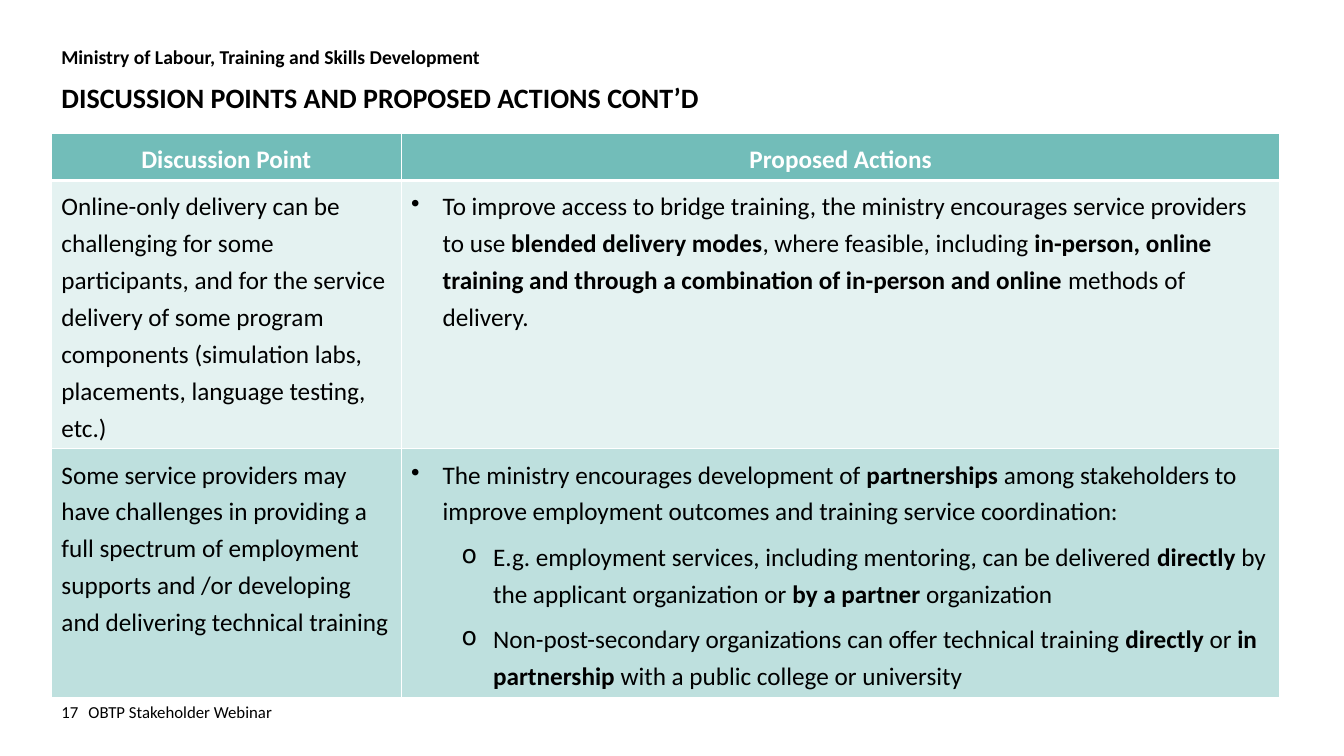
from dataclasses import dataclass

from lxml import etree
from pptx import Presentation
from pptx import util as u
from pptx.dml import color
from pptx.enum import text
from pptx.oxml import ns

COLORS = {"ink": "000000", "white": "FFFFFF", "teal": "44A7A2", "pale": "BEE0DE"}
FONT = "Calibri"
LEFT = 36.72
COLUMN_WIDTHS = (249.84, 627.84)


@dataclass(frozen=True)
class Line:
    """A paragraph of a cell; ** switches bold on and off."""
    words: str
    bullet: str = ""
    level: int = 0


@dataclass(frozen=True)
class Row:
    height: float
    fill: str
    opacity: int
    cells: tuple[tuple[Line, ...], ...]
    header: bool = False


@dataclass(frozen=True)
class Label:
    words: str
    left: float
    top: float
    width: float
    height: float
    size: float = 12
    bold: bool = False
    anchor: text.MSO_ANCHOR = text.MSO_ANCHOR.MIDDLE


LABELS = (
    Label("Ministry of Labour, Training and Skills Development", LEFT, 28.8, 700.56, 24.48,
          size=14, bold=True, anchor=text.MSO_ANCHOR.TOP),
    Label("17", LEFT, 493.92, 54, 28.8),
    Label("OBTP Stakeholder Webinar", 56.16, 493.92, 292.32, 28.8),
)

ROWS = (
    Row(33.84, "teal", 75, ((Line("Discussion Point"),), (Line("Proposed Actions"),)), header=True),
    Row(182.88, "teal", 14, (
        (Line("Online-only delivery can be challenging for some participants, and for the "
              "service delivery of some program components (simulation labs, placements, "
              "language testing, etc.)"),),
        (Line("To improve access to bridge training, the ministry encourages service providers "
              "to use **blended delivery modes**, where feasible, including **in-person, online "
              "training and through a combination of in-person and online **methods of "
              "delivery.", "•"),),
    )),
    Row(168.48, "pale", 100, (
        (Line("Some service providers may have challenges in providing a full spectrum of "
              "employment supports and /or developing and delivering technical training"),),
        (Line("The ministry encourages development of **partnerships **among stakeholders to "
              "improve employment outcomes and training service coordination:", "•"),
         Line("E.g. employment services, including mentoring, can be delivered **directly **by "
              "the applicant organization or **by a partner **organization", "o", 1),
         Line("Non-post-secondary organizations can offer technical training **directly** or "
              "**in partnership **with a public college or university", "o", 1)),
    )),
)


def write(para, words: str, *, size: float, bold: bool = False, ink: str = "ink",
          align=text.PP_ALIGN.LEFT, line_spacing: float = 1.0, space_after: float = 0) -> None:
    """Fill a paragraph, reversing the bold setting at each ** mark."""
    para.alignment = align
    para.line_spacing = line_spacing
    para.space_after = u.Pt(space_after)
    for index, part in enumerate(words.split("**")):
        if part:
            span = para.add_run()
            span.text = part
            span.font.name = FONT
            span.font.size = u.Pt(size)
            span.font.bold = bold != bool(index % 2)
            span.font.color.rgb = color.RGBColor.from_string(COLORS[ink])


def add_bullet(para, mark: str, level: int) -> None:
    para.level = level
    properties = para._p.get_or_add_pPr()
    properties.set("marL", str(u.Pt(22.5 + 36 * level)))
    properties.set("indent", str(u.Pt(-22.5)))
    etree.SubElement(properties, ns.qn("a:buChar"), char=mark)


def add_borders(cell, *, top: float, bottom: float) -> None:
    properties = cell._tc.get_or_add_tcPr()
    for side, width in {"L": 1, "R": 1, "T": top, "B": bottom}.items():
        line = etree.SubElement(properties, ns.qn(f"a:ln{side}"), w=str(u.Pt(width)))
        fill = etree.SubElement(line, ns.qn("a:solidFill"))
        etree.SubElement(fill, ns.qn("a:srgbClr"), val=COLORS["white"])


def paint(cell, fill: str, opacity: int) -> None:
    cell.fill.solid()
    cell.fill.fore_color.rgb = color.RGBColor.from_string(COLORS[fill])
    if opacity < 100:
        swatch = cell._tc.tcPr.find(f".//{ns.qn('a:srgbClr')}[@val='{COLORS[fill]}']")
        etree.SubElement(swatch, ns.qn("a:alpha"), val=str(opacity * 1000))


def fill_cell(cell, row: Row, lines: tuple[Line, ...], *, top: float) -> None:
    add_borders(cell, top=top, bottom=3 if row.header else 1)
    paint(cell, row.fill, row.opacity)
    frame = cell.text_frame
    for index, line in enumerate(lines):
        para = frame.add_paragraph() if index else frame.paragraphs[0]
        if line.bullet:
            add_bullet(para, line.bullet, line.level)
        write(para, line.words, size=18, bold=row.header,
              ink="white" if row.header else "ink",
              align=text.PP_ALIGN.CENTER if row.header else text.PP_ALIGN.LEFT,
              line_spacing=1.2, space_after=6)


def add_action_table(page) -> None:
    table = page.shapes.add_table(
        len(ROWS), len(COLUMN_WIDTHS), u.Pt(LEFT), u.Pt(95.04),
        u.Pt(sum(COLUMN_WIDTHS)), u.Pt(sum(row.height for row in ROWS))).table
    table.horz_banding = False
    for column, width in zip(table.columns, COLUMN_WIDTHS):
        column.width = u.Pt(width)
    for r, row in enumerate(ROWS):
        table.rows[r].height = u.Pt(row.height)
        top = 3 if r and ROWS[r - 1].header else 1
        for c, lines in enumerate(row.cells):
            fill_cell(table.cell(r, c), row, lines, top=top)


def add_label(page, label: Label) -> None:
    box = page.shapes.add_textbox(u.Pt(label.left), u.Pt(label.top),
                                  u.Pt(label.width), u.Pt(label.height))
    frame = box.text_frame
    frame.word_wrap = True
    frame.vertical_anchor = label.anchor
    write(frame.paragraphs[0], label.words, size=label.size, bold=label.bold)


def set_title(page, words: str) -> None:
    title = page.shapes.title
    title.left, title.top = u.Pt(LEFT), u.Pt(56.88)
    title.width, title.height = u.Pt(799.2), u.Pt(48.96)
    frame = title.text_frame
    frame.auto_size = text.MSO_AUTO_SIZE.NONE
    frame.vertical_anchor = text.MSO_ANCHOR.TOP
    write(frame.paragraphs[0], words, size=20, bold=True, line_spacing=0.9)


def main() -> None:
    deck = Presentation()
    deck.slide_width, deck.slide_height = u.Pt(960), u.Pt(540)
    page = deck.slides.add_slide(deck.slide_layouts.get_by_name("Title Only"))
    set_title(page, "DISCUSSION POINTS AND PROPOSED ACTIONS CONT’D")
    add_action_table(page)
    for label in LABELS:
        add_label(page, label)
    deck.save("out.pptx")


if __name__ == "__main__":
    main()
